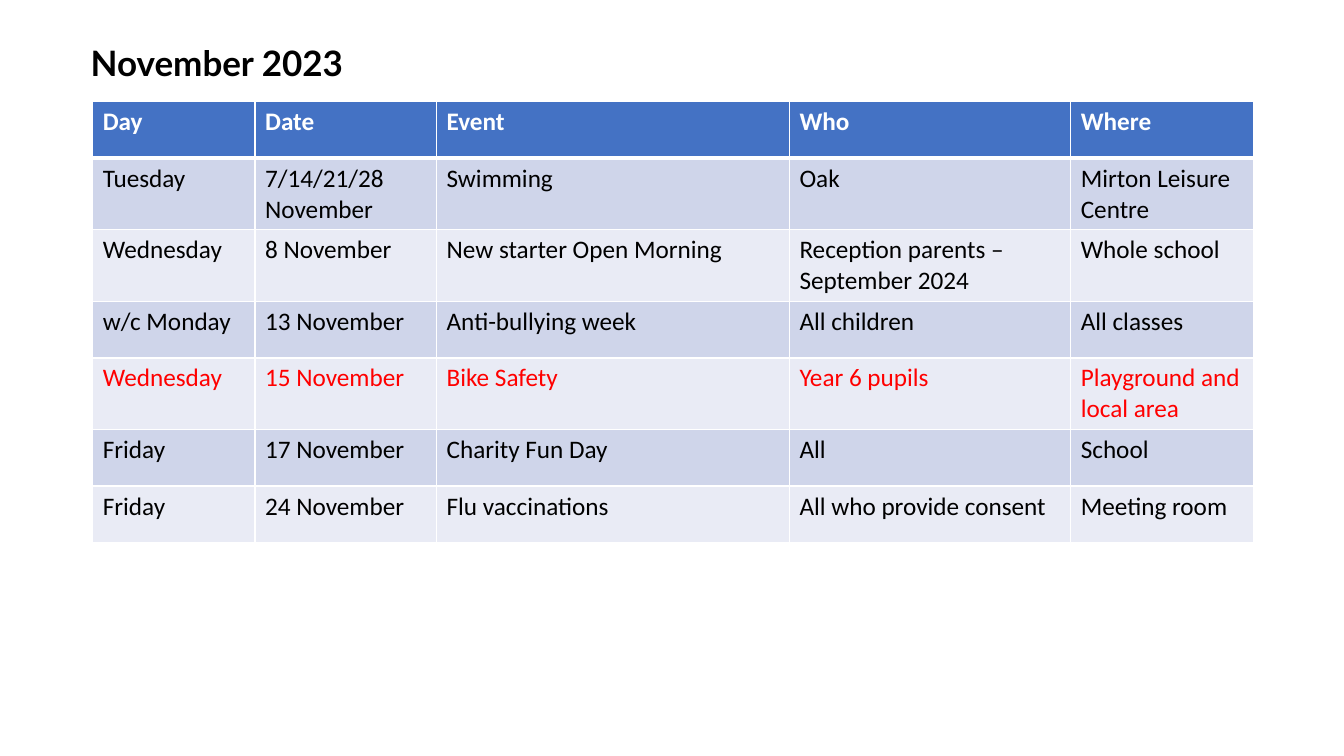
from lxml import etree
from pptx import Presentation
from pptx.dml.color import RGBColor
from pptx.enum import text
from pptx.oxml.ns import qn
from pptx.util import Inches, Pt

TITLE = "November 2023"
HEADINGS = ("Day", "Date", "Event", "Who", "Where")
EVENTS = [
    ("Tuesday", "7/14/21/28 November", "Swimming", "Oak", "Mirton Leisure Centre"),
    ("Wednesday", "8 November", "New starter Open Morning",
     "Reception parents – September 2024", "Whole school"),
    ("w/c Monday", "13 November", "Anti-bullying week", "All children", "All classes"),
    ("Wednesday", "15 November", "Bike Safety", "Year 6 pupils",
     "Playground and local area"),
    ("Friday", "17 November", "Charity Fun Day", "All", "School"),
    ("Friday", "24 November", "Flu vaccinations", "All who provide consent",
     "Meeting room"),
]
HIGHLIGHTED_ROW = 4
COLUMN_WIDTHS = (1.61, 1.8, 3.5, 2.79, 1.81)
ROW_HEIGHT = 0.56

BLACK = RGBColor(0x00, 0x00, 0x00)
WHITE = RGBColor(0xFF, 0xFF, 0xFF)
RED = RGBColor(0xFF, 0x00, 0x00)
HEADER_BLUE = RGBColor(0x44, 0x72, 0xC4)
BANDS = (RGBColor(0xE9, 0xEB, 0xF5), RGBColor(0xCF, 0xD5, 0xEA))


def format_text(text_frame, font_name, size, color, bold):
    paragraph = text_frame.paragraphs[0]
    paragraph.alignment = text.PP_ALIGN.LEFT
    font = paragraph.runs[0].font
    font.name, font.size, font.bold = font_name, Pt(size), bold
    font.color.rgb = color


def add_borders(cell, bottom_width, top_width):
    """Draw white borders; call before filling, as XML order requires."""
    properties = cell._tc.get_or_add_tcPr()
    for side, width in (("L", 1), ("R", 1), ("T", top_width), ("B", bottom_width)):
        line = etree.SubElement(properties, qn(f"a:ln{side}"), w=str(Pt(width)))
        fill = etree.SubElement(line, qn("a:solidFill"))
        etree.SubElement(fill, qn("a:srgbClr"), val=str(WHITE))


def add_title(slide):
    title = slide.shapes.title
    title.left, title.top = Inches(0.8), Inches(0.36)
    title.width, title.height = Inches(4.45), Inches(0.52)
    frame = title.text_frame
    frame.text = TITLE
    frame.word_wrap = True
    frame.auto_size = text.MSO_AUTO_SIZE.NONE
    frame.vertical_anchor = text.MSO_ANCHOR.TOP
    format_text(frame, "Lato", 25, BLACK, True)


def add_calendar(slide):
    rows = [HEADINGS, *EVENTS]
    table = slide.shapes.add_table(
        len(rows), len(HEADINGS), Inches(0.92), Inches(1.01),
        Inches(sum(COLUMN_WIDTHS)), Inches(ROW_HEIGHT * len(rows))).table
    for column, width in zip(table.columns, COLUMN_WIDTHS):
        column.width = Inches(width)
    for row_index, values in enumerate(rows):
        table.rows[row_index].height = Inches(ROW_HEIGHT)
        is_header = row_index == 0
        background = HEADER_BLUE if is_header else BANDS[row_index % 2]
        color = WHITE if is_header else RED if row_index == HIGHLIGHTED_ROW else BLACK
        for column_index, value in enumerate(values):
            cell = table.cell(row_index, column_index)
            cell.text_frame.text = value
            format_text(cell.text_frame, "Calibri", 18, color, is_header)
            add_borders(cell, 3 if is_header else 1, 3 if row_index == 1 else 1)
            cell.fill.solid()
            cell.fill.fore_color.rgb = background


def main():
    presentation = Presentation()
    presentation.slide_width = Inches(13.33)
    presentation.slide_height = Inches(7.5)
    slide = presentation.slides.add_slide(presentation.slide_layouts[5])
    add_calendar(slide)
    add_title(slide)
    presentation.save("out.pptx")


if __name__ == "__main__":
    main()
